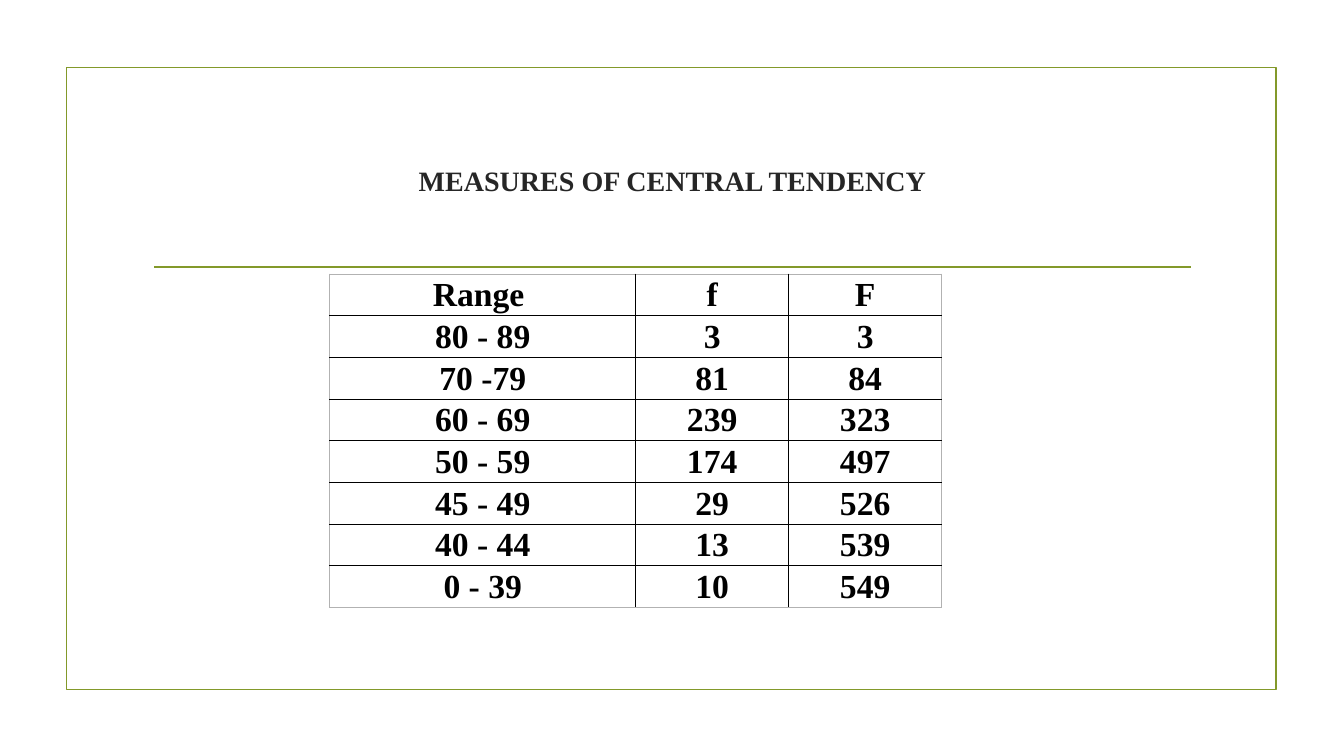
from lxml import etree
from pptx import Presentation
from pptx.dml.color import RGBColor
from pptx.enum.shapes import MSO_CONNECTOR, MSO_SHAPE
from pptx.enum.text import MSO_ANCHOR, PP_ALIGN
from pptx.oxml.ns import qn
from pptx.util import Inches, Pt

RECT, LINE = MSO_SHAPE.RECTANGLE, MSO_CONNECTOR.STRAIGHT
MIDDLE, TOP, CENTER = MSO_ANCHOR.MIDDLE, MSO_ANCHOR.TOP, PP_ALIGN.CENTER

WIDE, HIGH = 13.33, 7.5
FONT = "Times New Roman"
COLORS = {"olive": "83992A", "title": "262626", "ink": "000000", "edge": "B2B2B2"}
ROWS = [
    ("Range ", "f", "F"),
    ("80 - 89", "3", "3"),
    ("70 -79", "81", "84"),
    ("60 - 69", "239", "323"),
    ("50 - 59", "174", "497"),
    ("45 - 49", "29", "526"),
    ("40 - 44", "13", "539"),
    ("0 - 39", "10", "549"),
]
SHARES = (2, 1, 1)  # column widths in quarters of the table


def color(name):
    return RGBColor.from_string(COLORS[name])


def write(frame, text, size, tint):
    para = frame.paragraphs[0]
    para.alignment = CENTER
    run = para.add_run()
    run.text = text
    font = run.font
    font.name, font.size, font.bold = FONT, Pt(size), True
    font.color.rgb = color(tint)
    return para


def add_frame(slide, box):
    """Olive border, with a rule under the title area."""
    left, top, width, height = box
    border = slide.shapes.add_shape(RECT, *map(Inches, box))
    border.shadow.inherit = False
    border.fill.background()
    inset, drop = 0.87, 1.98
    rule = slide.shapes.add_connector(
        LINE, Inches(left + inset), Inches(top + drop),
        Inches(left + width - inset + 0.02), Inches(top + drop))
    etree.SubElement(rule._element.spPr, qn("a:effectLst"))
    for part in (border, rule):
        part.line.color.rgb = color("olive")
        part.line.width = Pt(1.25)


def add_title(slide, box):
    title = slide.shapes.title
    title.left, title.top, title.width, title.height = map(Inches, box)
    title.text_frame.vertical_anchor = MIDDLE
    write(title.text_frame, "MEASURES OF CENTRAL TENDENCY", 20, "title")


def add_edges(cell, outer):
    """Grey sides on the rim of the table, black ones inside."""
    props = cell._tc.get_or_add_tcPr()
    for side in "LRTB":
        line = etree.SubElement(props, qn("a:ln" + side), w=str(Pt(1)))
        fill = etree.SubElement(line, qn("a:solidFill"))
        tint = COLORS["edge" if side in outer else "ink"]
        etree.SubElement(fill, qn("a:srgbClr"), val=tint)


def add_grid(slide, box):
    left, top, width, height = box
    count = len(ROWS)
    table = slide.shapes.add_table(count, len(SHARES), *map(Inches, box)).table
    table.first_row = table.horz_banding = False
    for col, share in zip(table.columns, SHARES):
        col.width = Inches(width * share / sum(SHARES))
    for r, row in enumerate(ROWS):
        table.rows[r].height = Inches(height / count)
        for c, text in enumerate(row):
            cell = table.cell(r, c)
            cell.margin_left = cell.margin_right = Inches(0.06)
            cell.margin_top = cell.margin_bottom = 0
            cell.vertical_anchor = TOP
            rim = {"L": c == 0, "R": c == len(row) - 1,
                   "T": r == 0, "B": r == count - 1}
            add_edges(cell, [side for side in rim if rim[side]])
            cell.fill.background()
            write(cell.text_frame, text, 24, "ink").line_spacing = 1.07


def main():
    deck = Presentation()
    deck.slide_width, deck.slide_height = Inches(WIDE), Inches(HIGH)
    slide = deck.slides.add_slide(deck.slide_layouts[5])
    add_frame(slide, (0.66, 0.67, 12, 6.17))
    add_title(slide, (1.42, 1.07, 10.5, 1.43))
    add_grid(slide, (3.27, 2.72, 6.07, 3.31))
    deck.save("out.pptx")


if __name__ == "__main__":
    main()
